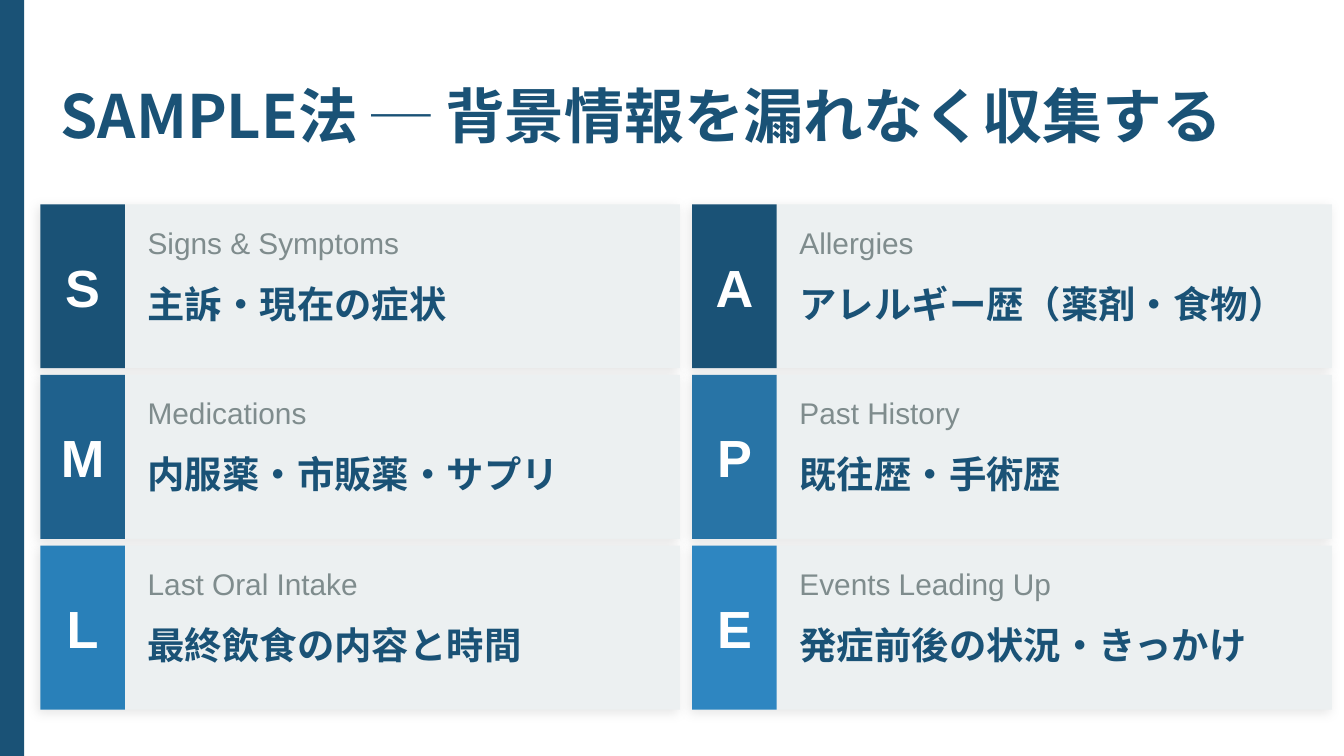
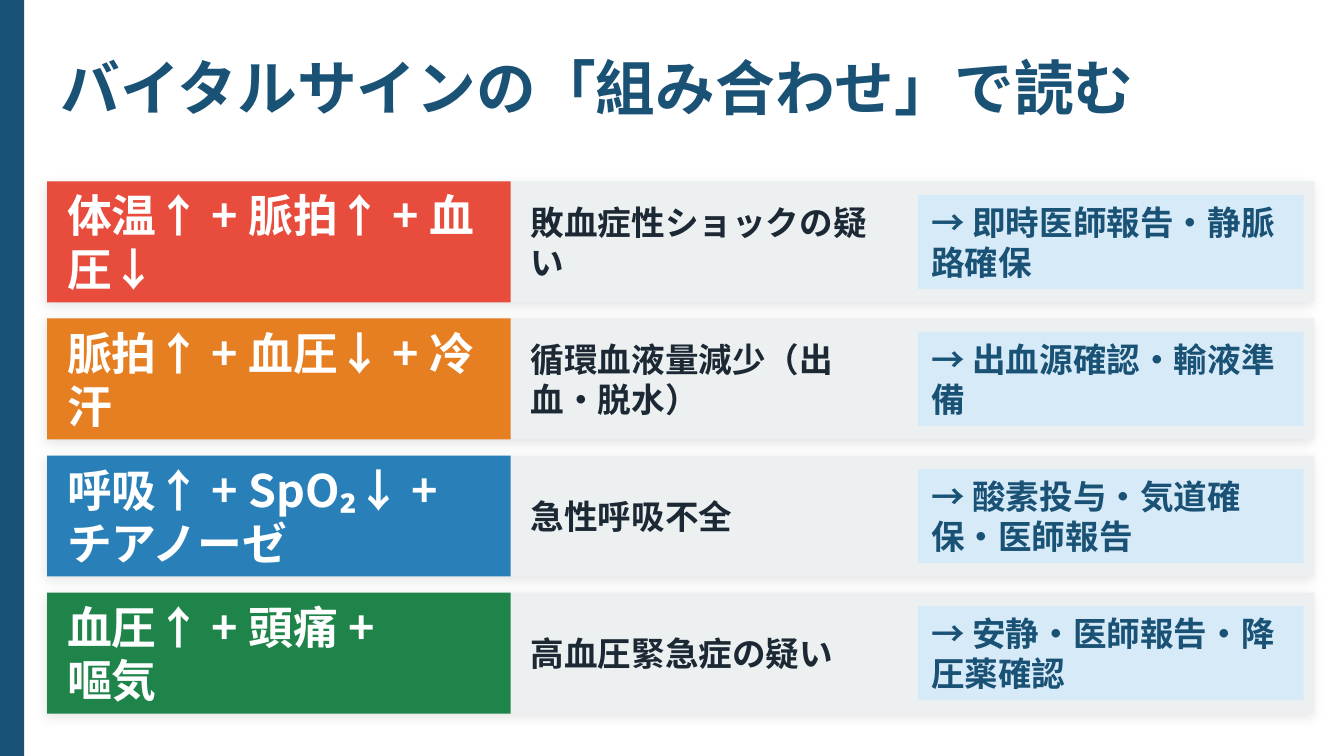
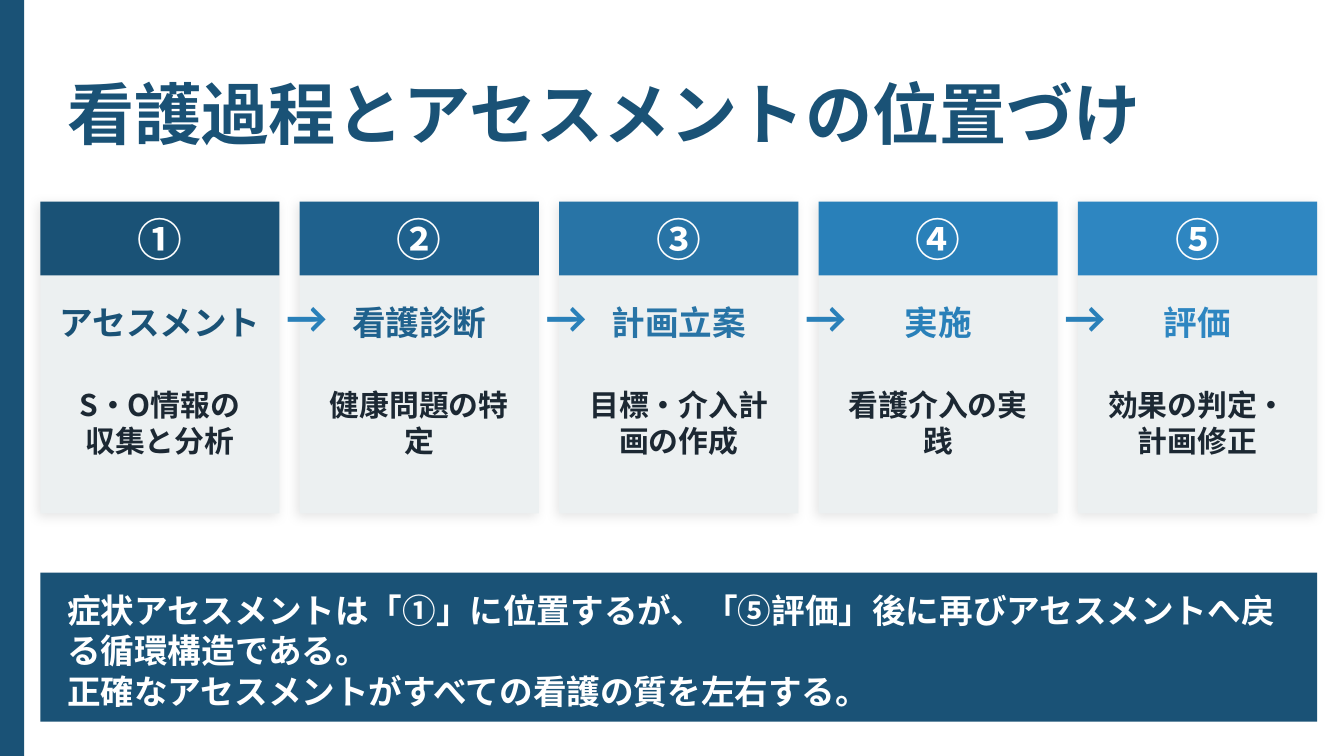
from collections import namedtuple

from lxml import etree
from pptx import Presentation
from pptx.dml.color import RGBColor
from pptx.enum.shapes import MSO_SHAPE
from pptx.enum.text import MSO_ANCHOR, MSO_AUTO_SIZE, PP_ALIGN
from pptx.oxml.ns import qn
from pptx.util import Inches, Pt

RECTANGLE = MSO_SHAPE.RECTANGLE
TOP, MIDDLE = MSO_ANCHOR.TOP, MSO_ANCHOR.MIDDLE
LEFT, CENTER = PP_ALIGN.LEFT, PP_ALIGN.CENTER
NO_FIT = MSO_AUTO_SIZE.NONE

# Shared look
NAVY = RGBColor(0x1A, 0x52, 0x76)
DEEP_BLUE = RGBColor(0x1F, 0x61, 0x8D)
MID_BLUE = RGBColor(0x28, 0x74, 0xA6)
BLUE = RGBColor(0x29, 0x80, 0xB9)
BRIGHT_BLUE = RGBColor(0x2E, 0x86, 0xC1)
PALE_BLUE = RGBColor(0xD6, 0xEA, 0xF8)
RED = RGBColor(0xE7, 0x4C, 0x3C)
ORANGE = RGBColor(0xE6, 0x7E, 0x22)
GREEN = RGBColor(0x1E, 0x84, 0x49)
CARD_GRAY = RGBColor(0xEC, 0xF0, 0xF1)
LABEL_GRAY = RGBColor(0x7F, 0x8C, 0x8D)
INK = RGBColor(0x1C, 0x28, 0x33)
WHITE = RGBColor(0xFF, 0xFF, 0xFF)

JAPANESE, LATIN, ARROW_FONT = "Noto Sans CJK JP", "Arial", "Calibri"
SLIDE_WIDTH = 10
SLIDE_HEIGHT = SLIDE_WIDTH * 9 / 16
TITLE_ONLY = 5
TEXT_INSETS = (0.1, 0.05, 0.1, 0.05)
NO_INSETS = (0, 0, 0, 0)

# All lengths in inches
Box = namedtuple("Box", "left top width height")

# Slide content
SAMPLE_ITEMS = [
    ("S", "Signs & Symptoms", "主訴・現在の症状", NAVY),
    ("A", "Allergies", "アレルギー歴（薬剤・食物）", NAVY),
    ("M", "Medications", "内服薬・市販薬・サプリ", DEEP_BLUE),
    ("P", "Past History", "既往歴・手術歴", MID_BLUE),
    ("L", "Last Oral Intake", "最終飲食の内容と時間", BLUE),
    ("E", "Events Leading Up", "発症前後の状況・きっかけ", BRIGHT_BLUE),
]
VITAL_PATTERNS = [
    ("体温↑ + 脈拍↑ + 血圧↓", "敗血症性ショックの疑い", "→ 即時医師報告・静脈路確保", RED),
    ("脈拍↑ + 血圧↓ + 冷汗", "循環血液量減少（出血・脱水）", "→ 出血源確認・輸液準備", ORANGE),
    ("呼吸↑ + SpO₂↓ + チアノーゼ", "急性呼吸不全", "→ 酸素投与・気道確保・医師報告", BLUE),
    ("血圧↑ + 頭痛 +\n嘔気", "高血圧緊急症の疑い", "→ 安静・医師報告・降圧薬確認", GREEN),
]
NURSING_STEPS = [
    ("①", "アセスメント", "S・O情報の収集と分析", NAVY),
    ("②", "看護診断", "健康問題の特定", DEEP_BLUE),
    ("③", "計画立案", "目標・介入計画の作成", MID_BLUE),
    ("④", "実施", "看護介入の実践", BLUE),
    ("⑤", "評価", "効果の判定・計画修正", BRIGHT_BLUE),
]
CYCLE_NOTE = (
    "症状アセスメントは「①」に位置するが、「⑤評価」後に再びアセスメントへ戻る循環構造である。\n"
    "正確なアセスメントがすべての看護の質を左右する。"
)


# Building blocks
def emu(box):
    return [Inches(length) for length in box]


def within(outer, left, top, width, height):
    """Box given by its offset from the corner of an outer box."""
    return Box(outer.left + left, outer.top + top, width, height)


def write(shape, text, size, color, font=JAPANESE, bold=True,
          align=LEFT, anchor=MIDDLE, insets=TEXT_INSETS):
    frame = shape.text_frame
    frame.text = text
    frame.word_wrap = True
    frame.auto_size = NO_FIT
    frame.vertical_anchor = anchor
    (frame.margin_left, frame.margin_top,
     frame.margin_right, frame.margin_bottom) = emu(insets)
    for paragraph in frame.paragraphs:
        paragraph.alignment = align
        for span in paragraph.runs:
            span.font.name = font
            span.font.size = Pt(size)
            span.font.bold = bold
            span.font.color.rgb = color
            east_asian = etree.SubElement(span.font._element, qn("a:ea"))
            east_asian.set("typeface", font)


def add_text(page, box, text, size, color, **style):
    write(page.shapes.add_textbox(*emu(box)), text, size, color, **style)


def add_block(page, box, color):
    block = page.shapes.add_shape(RECTANGLE, *emu(box))
    block.shadow.inherit = False
    block.fill.solid()
    block.fill.fore_color.rgb = color
    block.line.fill.background()
    return block


def add_card(page, box):
    """Gray panel with a soft shadow."""
    card = add_block(page, box, CARD_GRAY)
    effects = card._element.spPr.find(qn("a:effectLst"))
    shadow = etree.SubElement(effects, qn("a:outerShdw"), blurRad=str(Pt(6)),
                              dist=str(Pt(2)), dir=str(135 * 60000),
                              algn="bl", rotWithShape="0")
    black = etree.SubElement(shadow, qn("a:srgbClr"), val="000000")
    etree.SubElement(black, qn("a:alpha"), val="10000")


def add_page(deck, title, title_box, title_size=32):
    """Page with the side band and a title."""
    page = deck.slides.add_slide(deck.slide_layouts[TITLE_ONLY])
    add_block(page, Box(0, 0, 0.18, SLIDE_HEIGHT), NAVY)
    heading = page.shapes.title
    heading.left, heading.top, heading.width, heading.height = emu(title_box)
    write(heading, title, title_size, NAVY)
    return page


# SAMPLE slide
def add_sample_card(page, box, letter, english, japanese, color):
    add_card(page, box)
    tile = add_block(page, within(box, 0, 0, 0.63, box.height), color)
    write(tile, letter, 28, WHITE, font=LATIN, align=CENTER, insets=NO_INSETS)
    add_text(page, within(box, 0.7, 0.1, 3.89, 0.45), english, 16, LABEL_GRAY,
             font=LATIN, bold=False, anchor=TOP)
    add_text(page, within(box, 0.7, 0.52, 3.89, 0.55), japanese, 20, NAVY,
             anchor=TOP)


def build_sample_slide(deck):
    page = add_page(deck, "SAMPLE法 ─ 背景情報を漏れなく収集する",
                    Box(0.35, 0.53, 9.3, 0.65))
    for index, item in enumerate(SAMPLE_ITEMS):
        row, column = divmod(index, 2)
        box = Box(0.3 + column * 4.85, 1.52 + row * 1.27, 4.76, 1.22)
        add_sample_card(page, box, *item)


# Vital sign slide
def add_pattern_row(page, box, signs, meaning, action, color):
    add_card(page, box)
    sign_block = add_block(page, within(box, 0, 0, 3.45, box.height), color)
    write(sign_block, signs, 24, WHITE, insets=(0.15, 0.05, 0.15, 0.05))
    add_text(page, within(box, 3.5, 0, 2.94, box.height), meaning, 18, INK)
    action_block = add_block(
        page, within(box, 6.48, 0.1, 2.87, box.height - 0.2), PALE_BLUE)
    write(action_block, action, 18, NAVY)


def build_vitals_slide(deck):
    page = add_page(deck, "バイタルサインの「組み合わせ」で読む",
                    Box(0.35, 0.32, 9.3, 0.65))
    for row, pattern in enumerate(VITAL_PATTERNS):
        add_pattern_row(page, Box(0.35, 1.35 + row * 1.02, 9.43, 0.9), *pattern)


# Nursing process slide
def add_step_card(page, box, number, name, detail, color):
    add_card(page, box)
    header = add_block(page, within(box, 0, 0, box.width, 0.55), color)
    write(header, number, 24, WHITE, align=CENTER, insets=NO_INSETS)
    add_text(page, within(box, 0, 0.62, box.width, 0.55), name, 18, color,
             align=CENTER)
    add_text(page, within(box, 0.1, 1.22, box.width - 0.2, 0.85), detail, 16,
             INK, align=CENTER)


def build_process_slide(deck):
    page = add_page(deck, "看護過程とアセスメントの位置づけ",
                    Box(0.4, 0.51, 9.3, 0.65), title_size=36)
    gap = 0.15
    first = Box(0.3, 1.5, 1.78, 2.32)
    boxes = [first._replace(left=first.left + index * (first.width + gap))
             for index in range(len(NURSING_STEPS))]
    for box, step in zip(boxes, NURSING_STEPS):
        add_step_card(page, box, *step)

    banner = add_block(page, Box(0.3, 4.26, 9.5, 1.11), NAVY)
    write(banner, CYCLE_NOTE, 18, WHITE, insets=(0.2, 0.22, 0.28, 0.17))

    # Arrows in the gaps between steps
    for box in boxes[:-1]:
        add_text(page, within(box, box.width, 0.57, gap, 0.55), "→", 24, BLUE,
                 font=ARROW_FONT, align=CENTER)


def main():
    deck = Presentation()
    deck.slide_width = Inches(SLIDE_WIDTH)
    deck.slide_height = Inches(SLIDE_HEIGHT)
    build_sample_slide(deck)
    build_vitals_slide(deck)
    build_process_slide(deck)
    deck.save("out.pptx")


if __name__ == "__main__":
    main()
